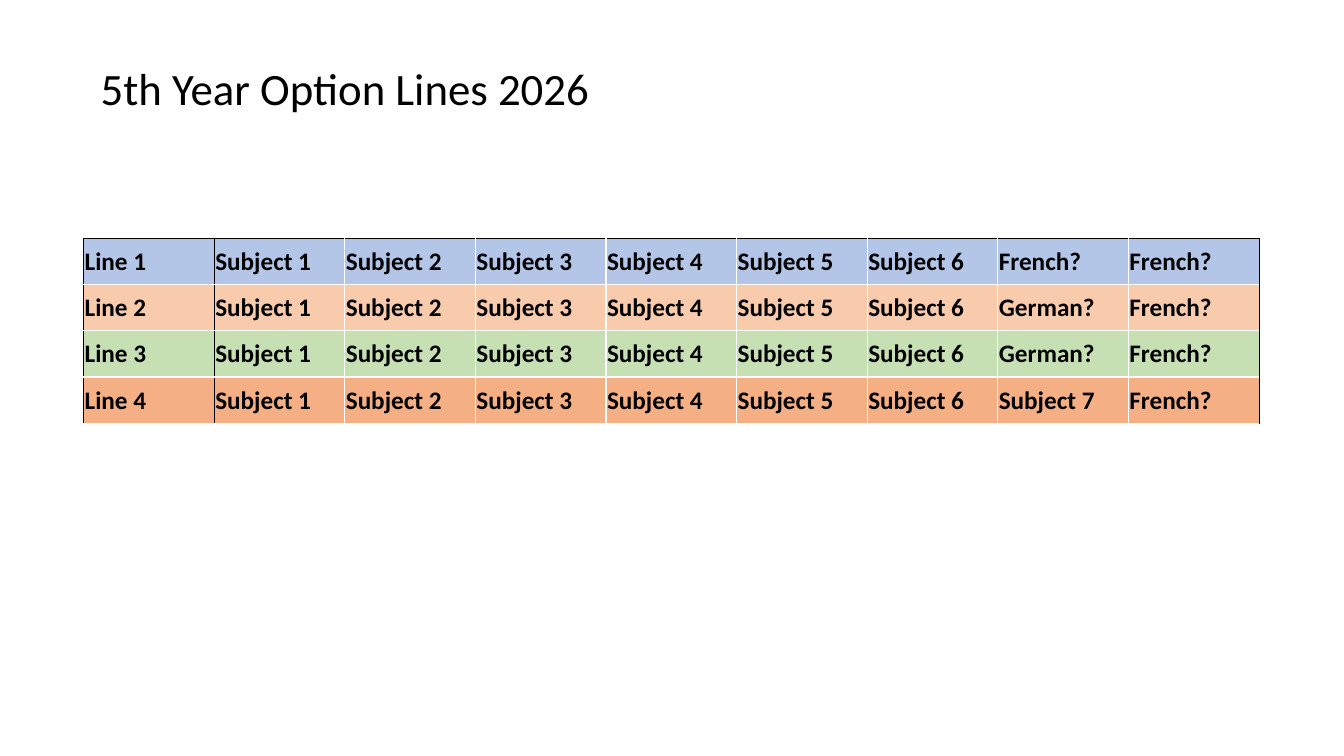
from lxml.etree import SubElement
from pptx import Presentation
from pptx.dml.color import RGBColor
from pptx.enum.text import MSO_ANCHOR as Anchor
from pptx.oxml.ns import qn
from pptx.util import Inches, Pt

SLIDE_W, SLIDE_H = 13.33, 7.5
TABLE_W, ROW_H = 11.66, 0.46
SUBJECTS = [f"Subject {number}" for number in range(1, 7)]
OPTION_LINES = [
    ("Line 1", "B4C6E7", ["French?", "French?"]),
    ("Line 2", "F8CBAD", ["German?", "French?"]),
    ("Line 3", "C6E0B4", ["German?", "French?"]),
    ("Line 4", "F4B084", ["Subject 7", "French?"]),
]
OUTLINE = ("000000", 0.5)
GRID = ("FFFFFF", 1)


def color(value):
    return RGBColor.from_string(value)


def write(frame, text, size, bold=False):
    run = frame.paragraphs[0].add_run()
    run.text = text
    run.font.name = "Calibri"
    run.font.size = Pt(size)
    run.font.bold = bold
    run.font.color.rgb = color("000000")


def add_title(slide, text):
    title = slide.shapes.add_textbox(
        Inches(0.9), Inches(0.55), Inches(SLIDE_W * 0.85), Inches(0.94))
    title.text_frame.word_wrap = True
    write(title.text_frame, text, 32)


def set_borders(cell, left, right, top, bottom):
    properties = cell._tc.get_or_add_tcPr()
    sides = zip(("a:lnL", "a:lnR", "a:lnT", "a:lnB"),
                (left, right, top, bottom))
    for tag, (line_color, width) in sides:
        line = SubElement(properties, qn(tag), w=str(Pt(width)))
        fill = SubElement(line, qn("a:solidFill"))
        SubElement(fill, qn("a:srgbClr"), val=line_color)


def fill_cell(cell, text, background):
    cell.margin_left = cell.margin_right = cell.margin_top = Inches(0.01)
    cell.margin_bottom = 0
    cell.vertical_anchor = Anchor.MIDDLE
    cell.fill.solid()
    cell.fill.fore_color.rgb = color(background)
    write(cell.text_frame, text, 18, bold=True)


def add_option_table(slide):
    rows = len(OPTION_LINES)
    columns = 1 + len(SUBJECTS) + len(OPTION_LINES[0][2])
    table = slide.shapes.add_table(
        rows, columns, Inches(0.83), Inches(2.36),
        Inches(TABLE_W), Inches(ROW_H * rows)).table
    for column in table.columns:
        column.width = Inches(TABLE_W / columns)
    for r, (label, background, languages) in enumerate(OPTION_LINES):
        table.rows[r].height = Inches(ROW_H)
        for c, text in enumerate([label, *SUBJECTS, *languages]):
            cell = table.cell(r, c)
            set_borders(
                cell,
                left=OUTLINE if c < 2 else GRID,
                right=OUTLINE if c in (0, columns - 1) else GRID,
                top=OUTLINE if r == 0 else GRID,
                bottom=GRID)
            fill_cell(cell, text, background)


def main():
    deck = Presentation()
    deck.slide_width, deck.slide_height = Inches(SLIDE_W), Inches(SLIDE_H)
    slide = deck.slides.add_slide(deck.slide_layouts[6])
    add_title(slide, "5th Year Option Lines 2026")
    add_option_table(slide)
    deck.save("out.pptx")


if __name__ == "__main__":
    main()
